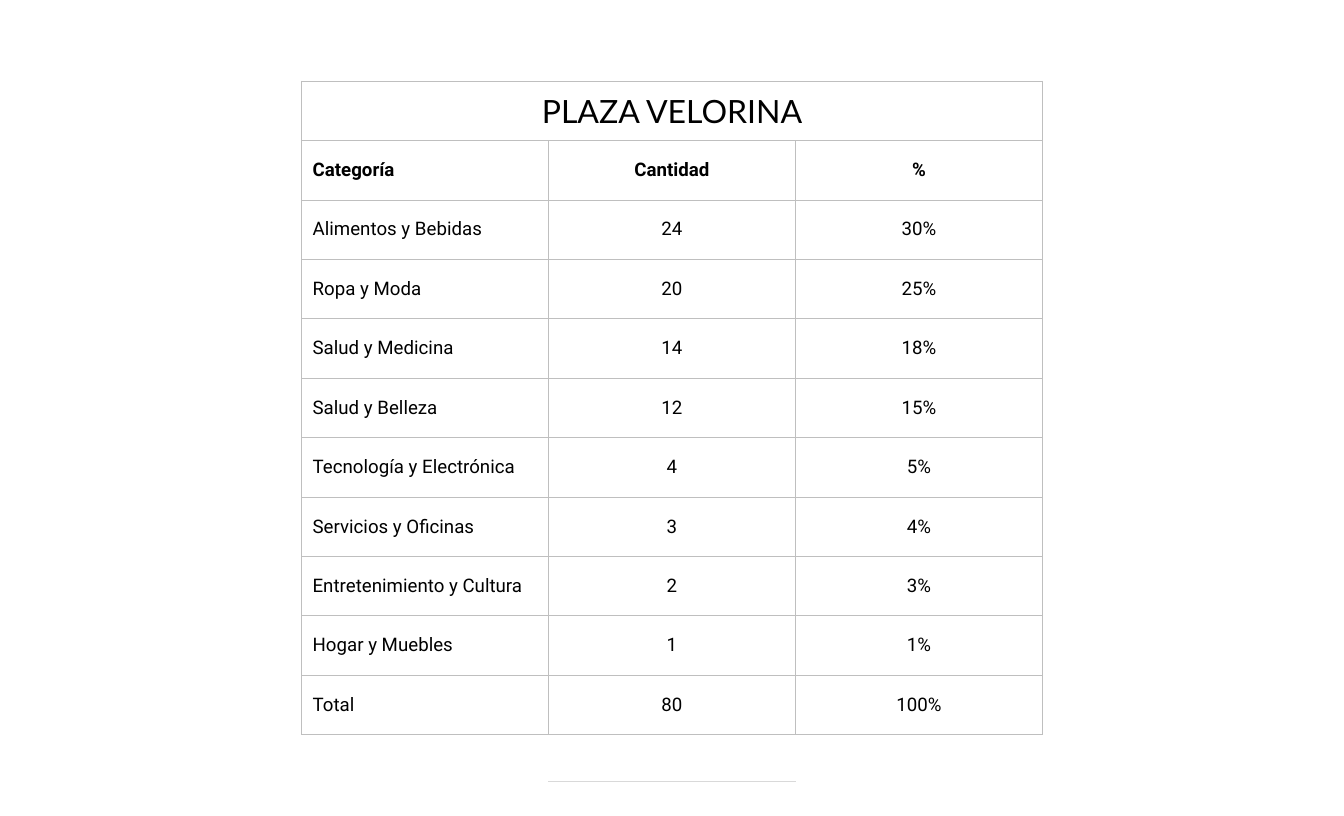
from lxml.etree import SubElement
from pptx import Presentation
from pptx.dml.color import RGBColor
from pptx.enum.shapes import MSO_CONNECTOR as Connector
from pptx.enum.text import MSO_ANCHOR as Anchor, PP_ALIGN as Align
from pptx.oxml.ns import qn
from pptx.util import Pt

SLIDE_WIDTH, SLIDE_HEIGHT = 1008, 612
COLUMN_WIDTH, ROW_HEIGHT = 185.28, 44.57
TABLE_TOP = 60.8
FOOTER_Y = 586
MARGIN, LABEL_INDENT = 0.75, 8.4
RULE_WIDTH = 0.5
INK, GRID, FOOTER = "000000", "BFBFBF", "D9D9D9"

TITLE = "PLAZA VELORINA"
HEADINGS = ("Categoría", "Cantidad", "%")
CATEGORIES = [
    ("Alimentos y Bebidas", "24", "30%"),
    ("Ropa y Moda", "20", "25%"),
    ("Salud y Medicina", "14", "18%"),
    ("Salud y Belleza", "12", "15%"),
    ("Tecnología y Electrónica", "4", "5%"),
    ("Servicios y Oficinas", "3", "4%"),
    ("Entretenimiento y Cultura", "2", "3%"),
    ("Hogar y Muebles", "1", "1%"),
    ("Total", "80", "100%"),
]


def color(hex_code):
    return RGBColor.from_string(hex_code)


def write(frame, text, font="Roboto", size=14, bold=False, align=Align.CENTER):
    paragraph = frame.paragraphs[0]
    paragraph.alignment = align
    run = paragraph.add_run()
    run.text = text
    run.font.name = font
    run.font.size = Pt(size)
    run.font.bold = bold
    run.font.color.rgb = color(INK)


def style_cell(cell, indent=MARGIN):
    cell.vertical_anchor = Anchor.MIDDLE
    cell.margin_left = Pt(indent)
    cell.margin_right = cell.margin_top = cell.margin_bottom = Pt(MARGIN)
    properties = cell._tc.get_or_add_tcPr()
    for side in ("a:lnL", "a:lnR", "a:lnT", "a:lnB"):
        border = SubElement(properties, qn(side), w=str(Pt(RULE_WIDTH)))
        fill = SubElement(border, qn("a:solidFill"))
        SubElement(fill, qn("a:srgbClr"), val=GRID)
    cell.fill.background()


def add_category_table(slide):
    rows = [HEADINGS, *CATEGORIES]
    row_count, column_count = len(rows) + 1, len(HEADINGS)
    width, height = COLUMN_WIDTH * column_count, ROW_HEIGHT * row_count
    table = slide.shapes.add_table(
        row_count, column_count, Pt((SLIDE_WIDTH - width) / 2), Pt(TABLE_TOP),
        Pt(width), Pt(height)).table
    table.first_row = table.horz_banding = False
    for column in table.columns:
        column.width = Pt(COLUMN_WIDTH)
    for row in table.rows:
        row.height = Pt(ROW_HEIGHT)

    title = table.cell(0, 0)
    title.merge(table.cell(0, column_count - 1))
    for column in range(column_count):
        style_cell(table.cell(0, column))
    write(title.text_frame, TITLE, font="Lato", size=24)

    for row, values in enumerate(rows, start=1):
        for column, value in enumerate(values):
            is_label = column == 0
            cell = table.cell(row, column)
            style_cell(cell, LABEL_INDENT if is_label else MARGIN)
            write(cell.text_frame, value, bold=values is HEADINGS,
                  align=Align.LEFT if is_label else Align.CENTER)


def add_footer_rule(slide):
    left = (SLIDE_WIDTH - COLUMN_WIDTH) / 2
    rule = slide.shapes.add_connector(
        Connector.STRAIGHT, Pt(left), Pt(FOOTER_Y),
        Pt(left + COLUMN_WIDTH), Pt(FOOTER_Y))
    rule.line.color.rgb = color(FOOTER)
    rule.line.width = Pt(RULE_WIDTH)
    SubElement(rule._element.spPr, qn("a:effectLst"))


def main():
    deck = Presentation()
    deck.slide_width, deck.slide_height = Pt(SLIDE_WIDTH), Pt(SLIDE_HEIGHT)
    slide = deck.slides.add_slide(deck.slide_layouts[6])
    add_footer_rule(slide)
    add_category_table(slide)
    deck.save("out.pptx")


if __name__ == "__main__":
    main()
